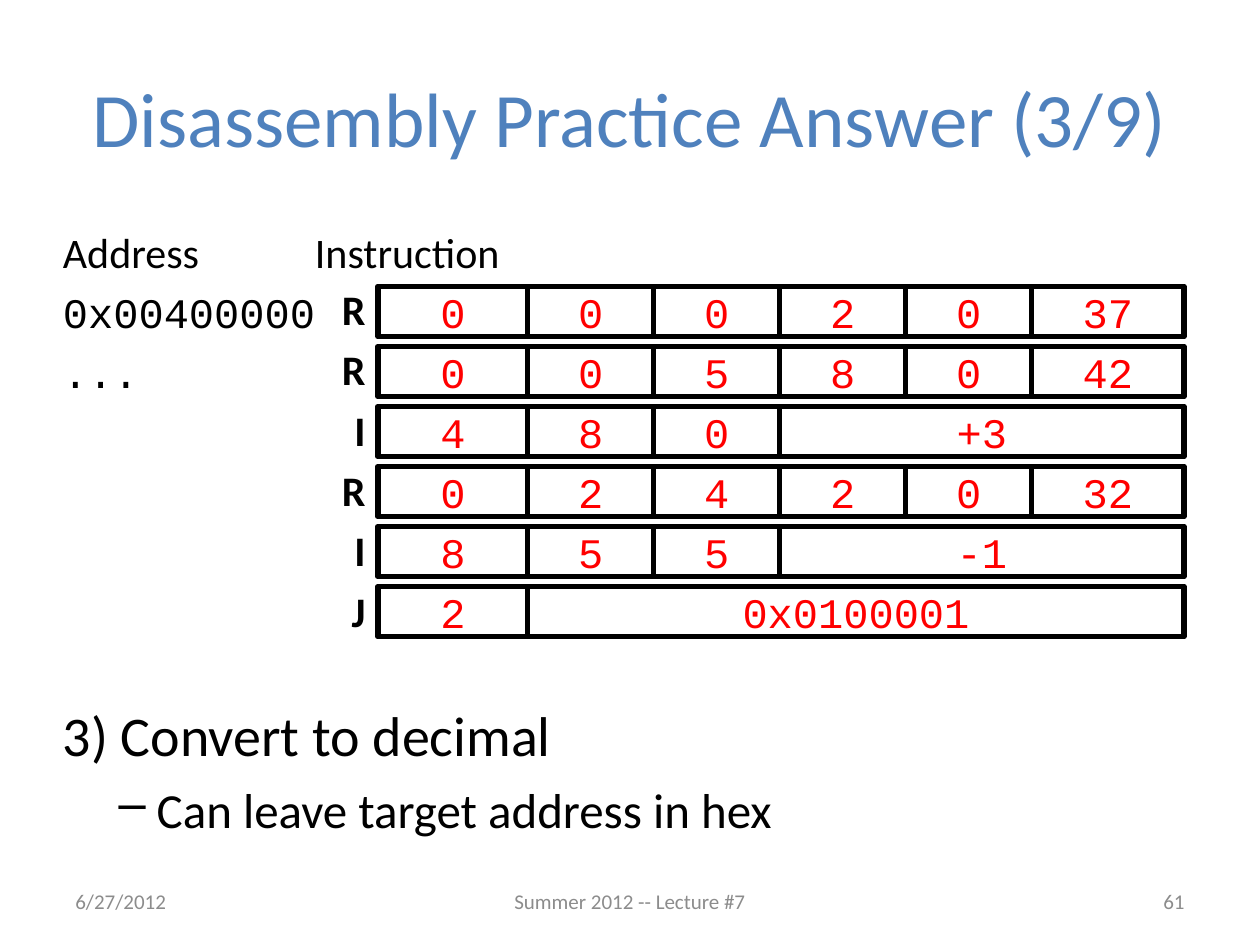
from dataclasses import dataclass

from lxml import etree
from pptx import Presentation
from pptx.dml.color import RGBColor
from pptx.enum.shapes import MSO_SHAPE
from pptx.enum.text import MSO_ANCHOR, PP_ALIGN
from pptx.oxml.ns import qn
from pptx.util import Cm, Pt

RECTANGLE = MSO_SHAPE.RECTANGLE
TOP, MIDDLE = MSO_ANCHOR.TOP, MSO_ANCHOR.MIDDLE
LEFT, CENTER, RIGHT = PP_ALIGN.LEFT, PP_ALIGN.CENTER, PP_ALIGN.RIGHT


@dataclass(frozen=True)
class Theme:
    sans: str = "Calibri"
    mono: str = "Courier New"
    title: RGBColor = RGBColor(0x4F, 0x81, 0xBD)
    ink: RGBColor = RGBColor(0, 0, 0)
    value: RGBColor = RGBColor(0xFF, 0, 0)
    footer: RGBColor = RGBColor(0x8C, 0x8C, 0x8C)
    title_size: int = 44
    step_size: int = 32
    detail_size: int = 28
    code_size: int = 24
    footer_size: int = 12
    border: int = 3


class SlideBuilder:
    def __init__(self, slide, theme):
        self.slide = slide
        self.theme = theme

    def style(self, para, size, color, name=None, bold=False, align=LEFT, before=0):
        para.alignment = align
        para.space_before = Pt(before)
        font = para.font
        font.name = name or self.theme.sans
        font.size = Pt(size)
        font.bold = bold
        font.color.rgb = color

    def text_frame(self, left, top, width, height, anchor=TOP):
        box = self.slide.shapes.add_textbox(Cm(left), Cm(top), Cm(width), Cm(height))
        frame = box.text_frame
        frame.word_wrap = True
        frame.vertical_anchor = anchor
        return frame

    def line(self, area, text, size, color, align):
        """Place one line of text, centred vertically in its area."""
        para = self.text_frame(*area, anchor=MIDDLE).paragraphs[0]
        para.text = text
        self.style(para, size, color, align=align)

    def labels(self, area, texts, gap):
        frame = self.text_frame(*area)
        for index, text in enumerate(texts):
            para = frame.add_paragraph() if index else frame.paragraphs[0]
            para.text = text
            self.style(para, self.theme.code_size, self.theme.ink, bold=True,
                       align=RIGHT, before=gap if index else 0)

    def field(self, left, top, width, height, text):
        theme = self.theme
        box = self.slide.shapes.add_shape(
            RECTANGLE, Cm(left), Cm(top), Cm(width), Cm(height))
        box.shadow.inherit = False
        box.fill.background()
        box.line.color.rgb = theme.ink
        box.line.width = Pt(theme.border)
        box.text_frame.vertical_anchor = MIDDLE
        para = box.text_frame.paragraphs[0]
        para.text = text
        self.style(para, theme.code_size, theme.value, theme.mono, align=CENTER)

    def body(self, area, rows):
        """Rows are (text, size, font name, space before)."""
        frame = self.text_frame(*area)
        for index, (text, size, name, before) in enumerate(rows):
            para = frame.add_paragraph() if index else frame.paragraphs[0]
            para.text = text
            if "\t" in text:
                self.add_tab(para, 5.08)
            if index == len(rows) - 1:
                self.add_dash(para, 1.12)
            self.style(para, size, self.theme.ink, name, before=before)

    def add_tab(self, para, position):
        stops = etree.SubElement(para._p.get_or_add_pPr(), qn("a:tabLst"))
        etree.SubElement(stops, qn("a:tab"), pos=str(Cm(position)), algn="l")

    def add_dash(self, para, indent):
        properties = para._p.get_or_add_pPr()
        properties.set("marL", str(Cm(indent)))
        properties.set("indent", "0")
        etree.SubElement(properties, qn("a:buChar"), char="–")


INSTRUCTIONS = [
    ("R", ["0", "0", "0", "2", "0", "37"]),
    ("R", ["0", "0", "5", "8", "0", "42"]),
    ("I", ["4", "8", "0", "+3"]),
    ("R", ["0", "2", "4", "2", "0", "32"]),
    ("I", ["8", "5", "5", "-1"]),
    ("J", ["2", "0x0100001"]),
]
FIELD_EDGES = [7.62, 10.64, 13.18, 15.72, 18.26, 20.8, 23.87]
FIRST_ROW, ROW_PITCH, ROW_HEIGHT = 5.77, 1.21, 1.02


def draw_instructions(builder):
    """The last field of every instruction reaches the right edge."""
    builder.labels((6.6, 5.59, 1.02, 7.49), [kind for kind, _ in INSTRUCTIONS], 5.7)
    for row, (_, values) in enumerate(INSTRUCTIONS):
        top = FIRST_ROW + row * ROW_PITCH
        edges = FIELD_EDGES[:len(values)] + FIELD_EDGES[-1:]
        for left, right, value in zip(edges, edges[1:], values):
            builder.field(left, top, right - left, ROW_HEIGHT, value)


def main():
    deck = Presentation()
    deck.slide_width, deck.slide_height = Cm(25.4), Cm(19.05)
    theme = Theme()
    builder = SlideBuilder(deck.slides.add_slide(deck.slide_layouts[6]), theme)

    builder.line((1.27, 0.76, 22.86, 3.18), "Disassembly Practice Answer (3/9)",
                 theme.title_size, theme.title, CENTER)
    builder.body((1.02, 4.45, 23.37, 13.72), [
        ("Address\tInstruction", theme.code_size, theme.sans, 0),
        ("0x00400000", theme.code_size, theme.mono, 5.5),
        ("...", theme.code_size, theme.mono, 5.5),
        ("3) Convert to decimal", theme.step_size, theme.sans, 173),
        (" Can leave target address in hex", theme.detail_size, theme.sans, 6.8),
    ])
    draw_instructions(builder)
    for left, width, text, align in [
        (1.27, 5.92, "6/27/2012", LEFT),
        (8.68, 8.04, "Summer 2012 -- Lecture #7", CENTER),
        (18.21, 5.92, "61", RIGHT),
    ]:
        builder.line((left, 17.65, width, 1.02), text,
                     theme.footer_size, theme.footer, align)
    deck.save("out.pptx")


if __name__ == "__main__":
    main()
